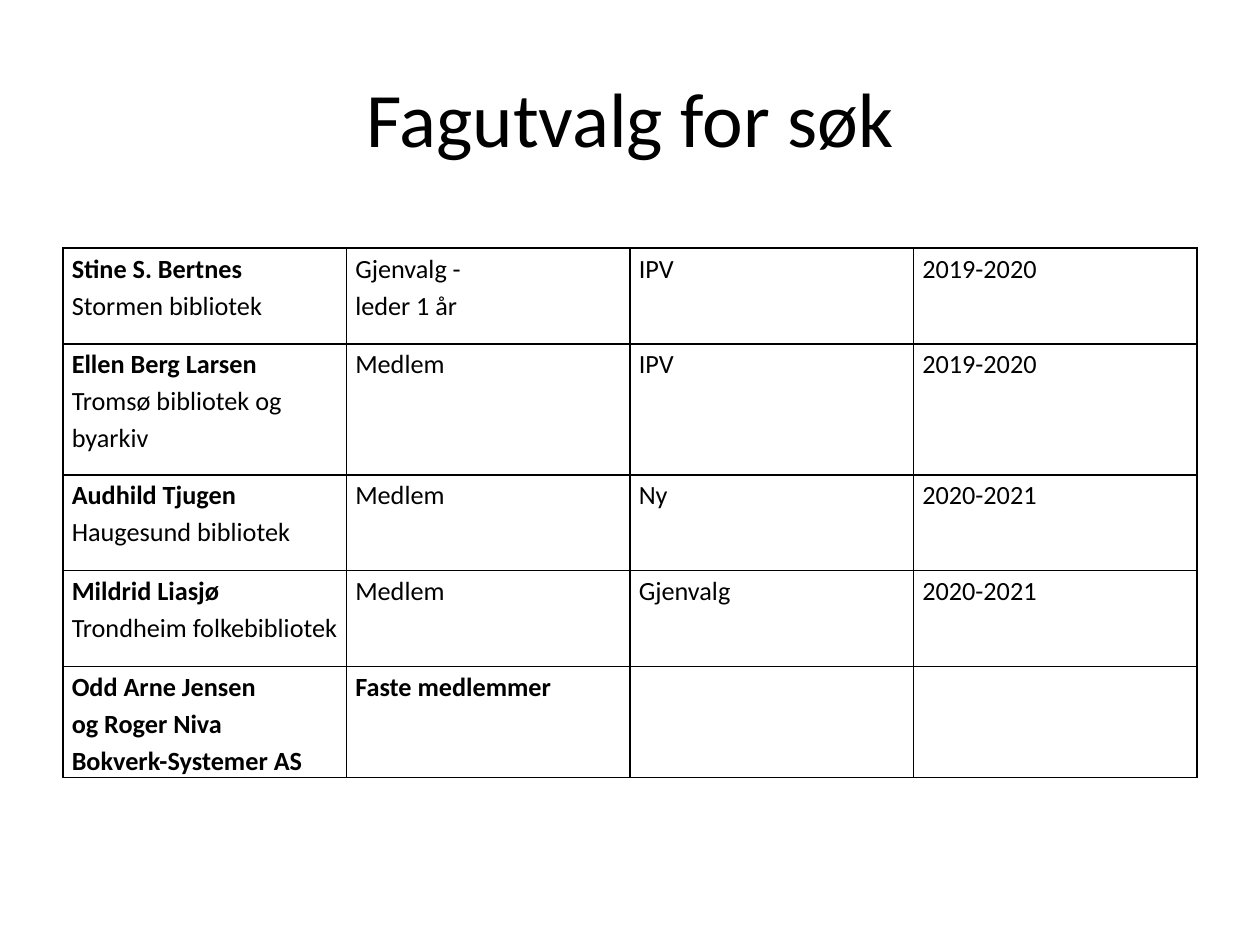
import pptx
import pptx.util
import pptx.dml.color
import pptx.enum.text
import lxml.etree

NS = "http://schemas.openxmlformats.org/drawingml/2006/main"
SIDES = ("lnL", "lnR", "lnT", "lnB")


def color(code):
    return pptx.dml.color.RGBColor.from_string(code)


class Deck:
    face = "Calibri"
    ink = "000000"
    big = 44
    small = 15
    lead = 1.15
    rule = 1
    inset = 0.07

    def __init__(self, wide, high):
        self.file = pptx.Presentation()
        self.file.slide_width = pptx.util.Inches(wide)
        self.file.slide_height = pptx.util.Inches(high)
        self.slide = self.file.slides.add_slide(self.file.slide_layouts[5])

    def across(self, share):
        return round(self.file.slide_width * share)

    def down(self, share):
        return round(self.file.slide_height * share)

    def place(self, item, left, top, width, height):
        item.left, item.width = self.across(left), self.across(width)
        item.top, item.height = self.down(top), self.down(height)

    def style(self, para, size):
        para.font.name = self.face
        para.font.size = pptx.util.Pt(size)
        para.font.color.rgb = color(self.ink)

    def title(self, text, *box):
        item = self.slide.shapes.title
        self.place(item, *box)
        frame = item.text_frame
        frame.text = text
        frame.vertical_anchor = pptx.enum.text.MSO_ANCHOR.MIDDLE
        para = frame.paragraphs[0]
        para.alignment = pptx.enum.text.PP_ALIGN.CENTER
        self.style(para, self.big)

    def border(self, cell):
        cell.fill.background()
        props = cell._tc.get_or_add_tcPr()
        for spot, side in enumerate(SIDES):
            line = lxml.etree.Element(f"{{{NS}}}{side}", w=str(pptx.util.Pt(self.rule)))
            fill = lxml.etree.SubElement(line, f"{{{NS}}}solidFill")
            lxml.etree.SubElement(fill, f"{{{NS}}}srgbClr", val=self.ink)
            props.insert(spot, line)

    def label(self, cell, lines, bolds):
        cell.margin_left = cell.margin_right = pptx.util.Inches(self.inset)
        cell.margin_top = cell.margin_bottom = 0
        para = cell.text_frame.paragraphs[0]
        para.line_spacing = self.lead
        self.style(para, self.small)
        for spot, text in enumerate(lines):
            if spot:
                para.add_line_break()
            run = para.add_run()
            run.text = text
            run.font.bold = spot < bolds

    def table(self, rows, heights, left, top, width):
        count = len(rows[0])
        table = self.slide.shapes.add_table(
            len(rows), count, self.across(left), self.down(top),
            self.across(width), self.down(sum(heights))).table
        table.first_row = table.horz_banding = False
        for col in table.columns:
            col.width = self.across(width / count)
        for row, height, cells in zip(table.rows, heights, rows):
            row.height = self.down(height)
            for cell, (lines, bolds) in zip(row.cells, cells):
                self.border(cell)
                self.label(cell, lines, bolds)

    def save(self):
        self.file.save("out.pptx")


def member(name, place, role, status, term):
    return [((name, place), 1), (role, 0), ((status,), 0), ((term,), 0)]


def main():
    deck = Deck(10, 7.5)
    deck.title("Fagutvalg for søk", 0.05, 0.04, 0.9, 1 / 6)
    rows = [
        member("Stine S. Bertnes", "Stormen bibliotek",
               ("Gjenvalg -", "leder 1 år"), "IPV", "2019-2020"),
        member("Ellen Berg Larsen", "Tromsø bibliotek og byarkiv",
               ("Medlem",), "IPV", "2019-2020"),
        member("Audhild Tjugen", "Haugesund bibliotek",
               ("Medlem",), "Ny", "2020-2021"),
        member("Mildrid Liasjø", "Trondheim folkebibliotek",
               ("Medlem",), "Gjenvalg", "2020-2021"),
        [(("Odd Arne Jensen", "og Roger Niva", "Bokverk-Systemer AS"), 3),
         (("Faste medlemmer",), 1), ((), 0), ((), 0)],
    ]
    heights = [size / 7.5 for size in (0.76, 1.04, 0.76, 0.76, 0.84)]
    deck.table(rows, heights, 0.05, 1.97 / 7.5, 0.9)
    deck.save()


if __name__ == "__main__":
    main()
